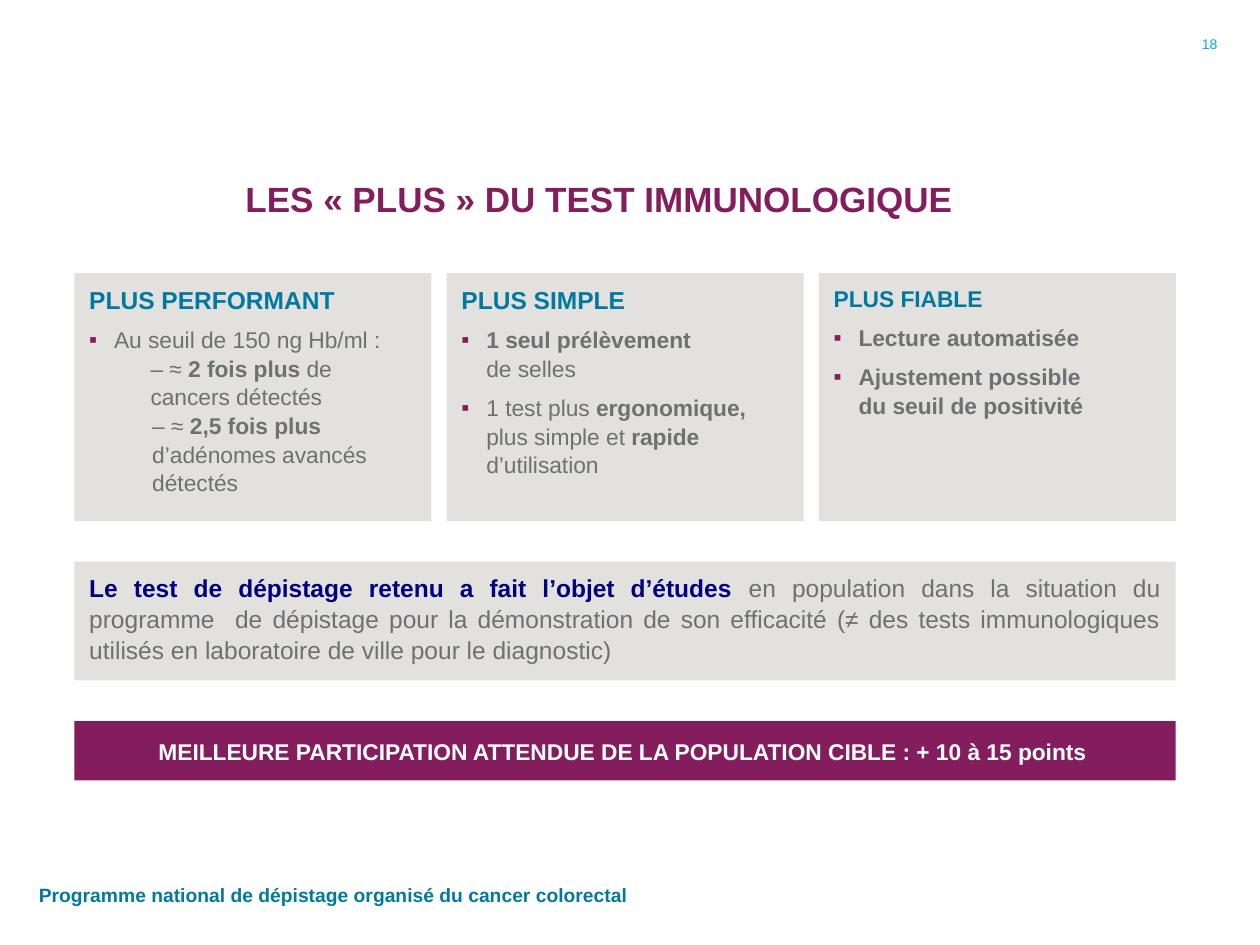
from lxml import etree
from pptx import Presentation
from pptx.dml.color import RGBColor
from pptx.enum.shapes import MSO_SHAPE
from pptx.enum.text import MSO_ANCHOR, PP_ALIGN
from pptx.oxml.ns import qn
from pptx.util import Pt

RECTANGLE = MSO_SHAPE.RECTANGLE
TOP, MIDDLE, BOTTOM = MSO_ANCHOR.TOP, MSO_ANCHOR.MIDDLE, MSO_ANCHOR.BOTTOM
LEFT, CENTER, RIGHT, JUSTIFY = (
    PP_ALIGN.LEFT, PP_ALIGN.CENTER, PP_ALIGN.RIGHT, PP_ALIGN.JUSTIFY)

THEME = {
    "font": "Arial",
    "plum": "841D5D", "teal": "0079A0", "cyan": "00AEEF", "navy": "000080",
    "grey": "6E7072", "panel": "E2E1DD", "white": "FFFFFF",
    "title": 20, "heading": 14, "body": 13, "footer": 11, "number": 8,
}

# Content: runs are (text, bold); "\n" is a line break
TITLE = "LES « PLUS » DU TEST IMMUNOLOGIQUE"
FOOTER = "Programme national de dépistage organisé du cancer colorectal"
SLIDE_NUMBER = "18"

# Cards: (heading, heading size, [(left indent, bulleted, space after, runs)])
CARDS = [
    ("PLUS PERFORMANT", "heading", [
        (14.2, True, 0, [("Au seuil de 150 ng Hb/ml :", False)]),
        (35, False, 0, [("– ≈ ", False), ("2 fois plus", True),
                        (" de cancers détectés", False)]),
        (36, False, 6, [("– ≈ ", False), ("2,5 fois plus ", True),
                        ("d’adénomes avancés détectés", False)]),
    ]),
    ("PLUS SIMPLE", "heading", [
        (14.2, True, 6, [("1 seul prélèvement ", True), ("\n", True),
                         ("de selles", False)]),
        (14.2, True, 6, [("1 test plus ", False), ("ergonomique, ", True),
                         ("plus simple et ", False), ("rapide ", True),
                         ("d’utilisation", False)]),
    ]),
    ("PLUS FIABLE", "body", [
        (14.2, True, 6, [("Lecture automatisée", True)]),
        (14.2, True, 6, [("Ajustement possible ", True), ("\n", True),
                         ("du seuil de positivité", True)]),
    ]),
]
STUDY_LEAD = "Le test de dépistage retenu a fait l’objet d’études "
STUDY_DETAIL = (
    "en population dans la situation du programme  de dépistage pour la "
    "démonstration de son efficacité (≠ des tests immunologiques utilisés "
    "en laboratoire de ville pour le diagnostic)")
PARTICIPATION = ("MEILLEURE PARTICIPATION ATTENDUE DE LA POPULATION CIBLE : "
                 "+ 10 à 15 points ")

# Layout, in points
MARGIN, CONTENT_WIDTH, CARD_GAP = 42.5, 629.4, 8.7
CARD_TOP, CARD_HEIGHT = 156.1, 141.7
STUDY_HEIGHT, PARTICIPATION_HEIGHT, ROW_GAP = 67.9, 33.9, 23.2
PANEL_INSETS, LABEL_INSETS = (8.5, 5.7), (7.2, 3.6)
LINE_SPACING = 1.05


def color(name):
    return RGBColor.from_string(THEME[name])


def set_frame(shape, anchor, insets):
    frame = shape.text_frame
    frame.word_wrap = True
    frame.vertical_anchor = anchor
    frame.margin_left = frame.margin_right = Pt(insets[0])
    frame.margin_top = frame.margin_bottom = Pt(insets[1])
    return frame


def add_panel(slide, left, top, width, height, fill, anchor=TOP):
    panel = slide.shapes.add_shape(
        RECTANGLE, Pt(left), Pt(top), Pt(width), Pt(height))
    panel.shadow.inherit = False
    panel.fill.solid()
    panel.fill.fore_color.rgb = color(fill)
    panel.line.fill.background()
    return set_frame(panel, anchor, PANEL_INSETS)


def add_run(paragraph, text, size, color_name, bold=True):
    if text == "\n":
        paragraph.add_line_break()
        return
    run = paragraph.add_run()
    run.text = text
    run.font.name = THEME["font"]
    run.font.size = Pt(THEME[size])
    run.font.bold = bold
    run.font.color.rgb = color(color_name)


def add_label(slide, box, text, size, color_name, anchor, align=LEFT, bold=True):
    label = slide.shapes.add_textbox(*[Pt(length) for length in box])
    paragraph = set_frame(label, anchor, LABEL_INSETS).paragraphs[0]
    paragraph.alignment = align
    add_run(paragraph, text, size, color_name, bold)


def format_paragraph(paragraph, align=LEFT, space_after=0):
    paragraph.alignment = align
    paragraph.line_spacing = LINE_SPACING
    paragraph.space_after = Pt(space_after)


def indent_paragraph(paragraph, indent, bulleted):
    properties = paragraph._p.get_or_add_pPr()
    properties.set("marL", str(Pt(indent)))
    properties.set("indent", str(Pt(-indent if bulleted else 0)))
    if bulleted:
        bullet_color = etree.SubElement(properties, qn("a:buClr"))
        etree.SubElement(bullet_color, qn("a:srgbClr"), val=THEME["plum"])
        etree.SubElement(properties, qn("a:buFont"), typeface=THEME["font"])
        etree.SubElement(properties, qn("a:buChar"), char="▪")


def add_card(slide, left, width, heading, heading_size, points):
    frame = add_panel(slide, left, CARD_TOP, width, CARD_HEIGHT, "panel")
    format_paragraph(frame.paragraphs[0], space_after=6)
    add_run(frame.paragraphs[0], heading, heading_size, "teal")
    for indent, bulleted, space_after, runs in points:
        paragraph = frame.add_paragraph()
        format_paragraph(paragraph, space_after=space_after)
        indent_paragraph(paragraph, indent, bulleted)
        for text, bold in runs:
            add_run(paragraph, text, "body", "grey", bold)


def main():
    deck = Presentation()
    deck.slide_width, deck.slide_height = Pt(720), Pt(540)
    slide = deck.slides.add_slide(deck.slide_layouts[6])

    # Title, footer and slide number
    add_label(slide, (133.2, 20.9, 547.2, 108), TITLE, "title", "plum", BOTTOM)
    add_label(slide, (15.1, 496.8, 356.4, 28.8), FOOTER, "footer", "teal", MIDDLE)
    add_label(slide, (671.8, 15.1, 31, 20.2), SLIDE_NUMBER, "number", "cyan",
              MIDDLE, RIGHT, bold=False)

    # Three advantage cards
    card_width = (CONTENT_WIDTH - CARD_GAP * (len(CARDS) - 1)) / len(CARDS)
    for index, card in enumerate(CARDS):
        add_card(slide, MARGIN + index * (card_width + CARD_GAP), card_width, *card)

    # Study evidence
    study_top = CARD_TOP + CARD_HEIGHT + ROW_GAP
    study = add_panel(slide, MARGIN, study_top, CONTENT_WIDTH, STUDY_HEIGHT,
                      "panel").paragraphs[0]
    format_paragraph(study, JUSTIFY)
    add_run(study, STUDY_LEAD, "heading", "navy")
    add_run(study, STUDY_DETAIL, "heading", "grey", bold=False)

    # Expected participation
    participation_top = study_top + STUDY_HEIGHT + ROW_GAP
    participation = add_panel(slide, MARGIN, participation_top, CONTENT_WIDTH,
                              PARTICIPATION_HEIGHT, "plum", MIDDLE).paragraphs[0]
    format_paragraph(participation, CENTER)
    add_run(participation, PARTICIPATION, "body", "white")

    deck.save("out.pptx")


if __name__ == "__main__":
    main()
